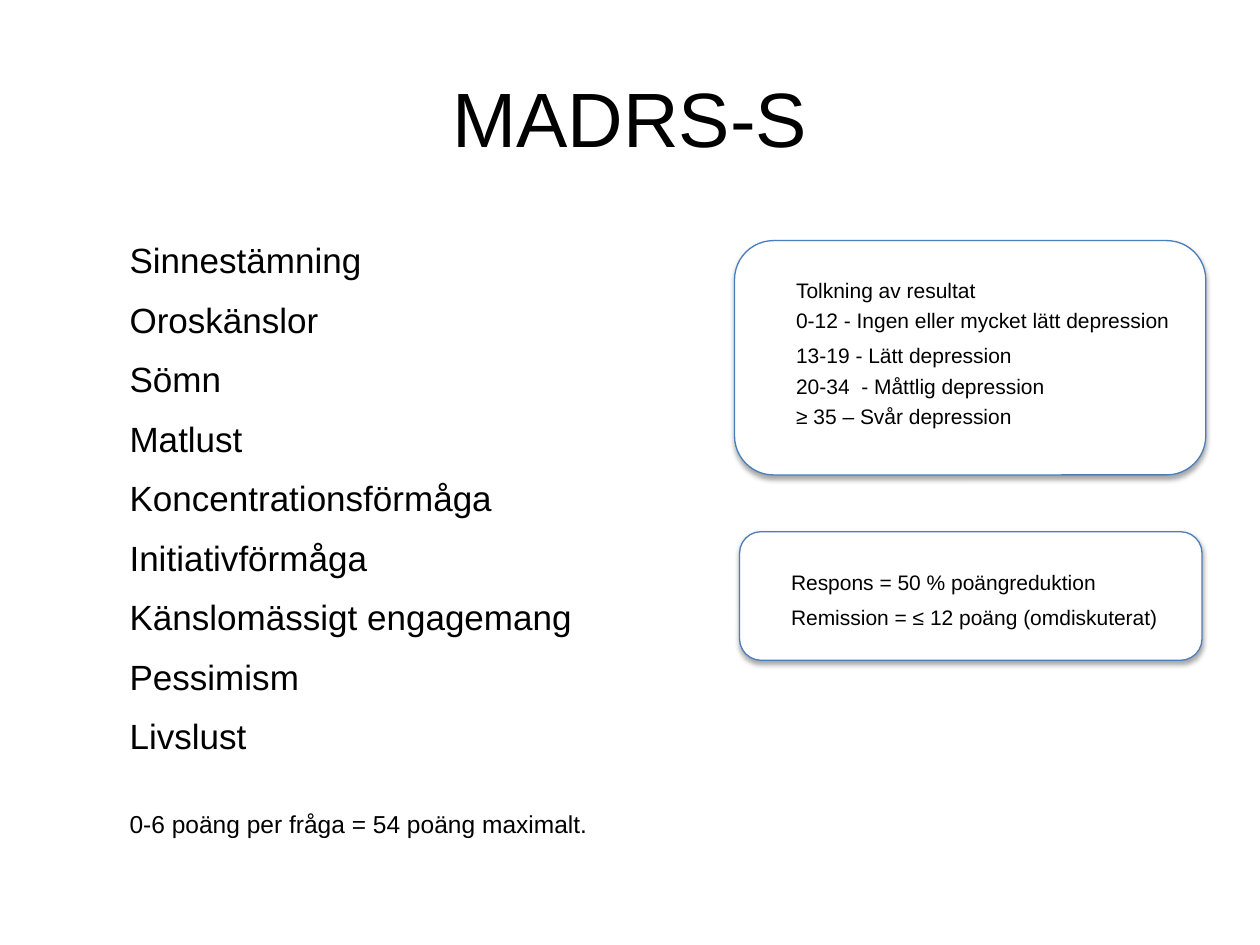
"""Build the MADRS-S slide with its question list and two interpretation panels."""
import dataclasses

import lxml.etree
import pptx
import pptx.dml.color
import pptx.enum.shapes
import pptx.enum.text
import pptx.oxml
import pptx.oxml.ns
import pptx.shapes.autoshape
import pptx.slide
import pptx.util

Inches = pptx.util.Inches
Pt = pptx.util.Pt


@dataclasses.dataclass(frozen=True)
class Theme:
    font: str = "Arial"
    text: str = "000000"
    panel_fill: str = "FFFFFF"
    panel_line: str = "4B7EBC"
    title_size: float = 44
    list_size: float = 20
    note_size: float = 14
    panel_size: float = 12
    line_spacing: float = 1.2
    space_ratio: float = 0.26


@dataclasses.dataclass(frozen=True)
class Area:
    left: float
    top: float
    width: float
    height: float

    def lengths(self) -> tuple[int, int, int, int]:
        return Inches(self.left), Inches(self.top), Inches(self.width), Inches(self.height)


@dataclasses.dataclass(frozen=True)
class Paragraph:
    lines: tuple[str, ...]
    size: float
    extra_space: float = 0


@dataclasses.dataclass(frozen=True)
class Panel:
    outline: Area
    text_area: Area
    paragraphs: tuple[Paragraph, ...]


THEME = Theme()
TITLE_AREA = Area(0.5, 0.3, 9, 1.25)
LIST_AREA = Area(0.93, 1.78, 3.92, 4.95)
QUESTIONS = (
    "Sinnestämning",
    "Oroskänslor",
    "Sömn",
    "Matlust",
    "Koncentrationsförmåga",
    "Initiativförmåga",
    "Känslomässigt engagemang",
    "Pessimism",
    "Livslust",
)
NOTE = Paragraph(("0-6 poäng per fråga = 54 poäng maximalt.",), THEME.note_size, 23)
PANELS = (
    Panel(
        Area(5.87, 4.22, 3.67, 1.02),
        Area(6.18, 4.43, 3.16, 0.95),
        (
            Paragraph(("Respons = 50 % poängreduktion",), THEME.panel_size),
            Paragraph(("Remission = ≤ 12 poäng (omdiskuterat)",), THEME.panel_size),
        ),
    ),
    Panel(
        Area(5.83, 1.91, 3.74, 1.86),
        Area(6.22, 2.11, 3.47, 1.82),
        (
            Paragraph(
                ("Tolkning av resultat", "0-12 - Ingen eller mycket lätt depression"),
                THEME.panel_size,
            ),
            Paragraph(
                ("13-19 - Lätt depression", "20-34  - Måttlig depression", "≥ 35 – Svår depression"),
                THEME.panel_size,
            ),
        ),
    ),
)


def color(value: str) -> pptx.dml.color.RGBColor:
    """Turn a hex value into a colour."""
    return pptx.dml.color.RGBColor.from_string(value)


def add_text(page: pptx.slide.Slide, area: Area, paragraphs: tuple[Paragraph, ...]) -> pptx.shapes.autoshape.Shape:
    """Add a wrapped text box whose paragraphs share the theme spacing."""
    box = page.shapes.add_textbox(*area.lengths())
    frame = box.text_frame
    frame.word_wrap = True
    for index, paragraph in enumerate(paragraphs):
        para = frame.add_paragraph() if index else frame.paragraphs[0]
        para.line_spacing = THEME.line_spacing
        para.space_before = Pt(round(paragraph.size * THEME.space_ratio + paragraph.extra_space, 1))
        for line_index, line in enumerate(paragraph.lines):
            if line_index:
                para.add_line_break()
            span = para.add_run()
            span.text = line
            span.font.name = THEME.font
            span.font.size = Pt(paragraph.size)
            span.font.color.rgb = color(THEME.text)
    return box


def add_title(page: pptx.slide.Slide, text: str) -> None:
    """Add the centred title."""
    box = add_text(page, TITLE_AREA, (Paragraph((text,), THEME.title_size),))
    box.text_frame.vertical_anchor = pptx.enum.text.MSO_ANCHOR.MIDDLE
    para = box.text_frame.paragraphs[0]
    para.alignment = pptx.enum.text.PP_ALIGN.CENTER
    para.line_spacing = 1.0
    para.space_before = Pt(0)


def add_shadow(shape: pptx.shapes.autoshape.Shape) -> None:
    """Give a shape a soft shadow falling straight down."""
    shape.shadow.inherit = False
    effects = shape._element.spPr.find(pptx.oxml.ns.qn("a:effectLst"))
    shadow = lxml.etree.SubElement(
        effects,
        pptx.oxml.ns.qn("a:outerShdw"),
        blurRad=str(Pt(3.1)),
        dist=str(Pt(1.8)),
        dir="5400000",
        rotWithShape="0",
    )
    tint = lxml.etree.SubElement(shadow, pptx.oxml.ns.qn("a:srgbClr"), val=THEME.text)
    lxml.etree.SubElement(tint, pptx.oxml.ns.qn("a:alpha"), val="35000")


def add_outline(page: pptx.slide.Slide, area: Area) -> None:
    """Add the rounded outline of a panel."""
    shape = page.shapes.add_shape(pptx.enum.shapes.MSO_SHAPE.ROUNDED_RECTANGLE, *area.lengths())
    shape.fill.solid()
    shape.fill.fore_color.rgb = color(THEME.panel_fill)
    shape.line.color.rgb = color(THEME.panel_line)
    shape.line.width = Pt(0.75)
    add_shadow(shape)


def main() -> None:
    """Build and save the deck."""
    deck = pptx.Presentation()
    deck.slide_width, deck.slide_height = Inches(10), Inches(7.5)
    page = deck.slides.add_slide(deck.slide_layouts[6])
    for panel in PANELS:
        add_outline(page, panel.outline)
    add_title(page, "MADRS-S")
    questions = tuple(Paragraph((question,), THEME.list_size) for question in QUESTIONS)
    add_text(page, LIST_AREA, questions + (NOTE,))
    for panel in reversed(PANELS):
        add_text(page, panel.text_area, panel.paragraphs)
    deck.save("out.pptx")


if __name__ == "__main__":
    main()
